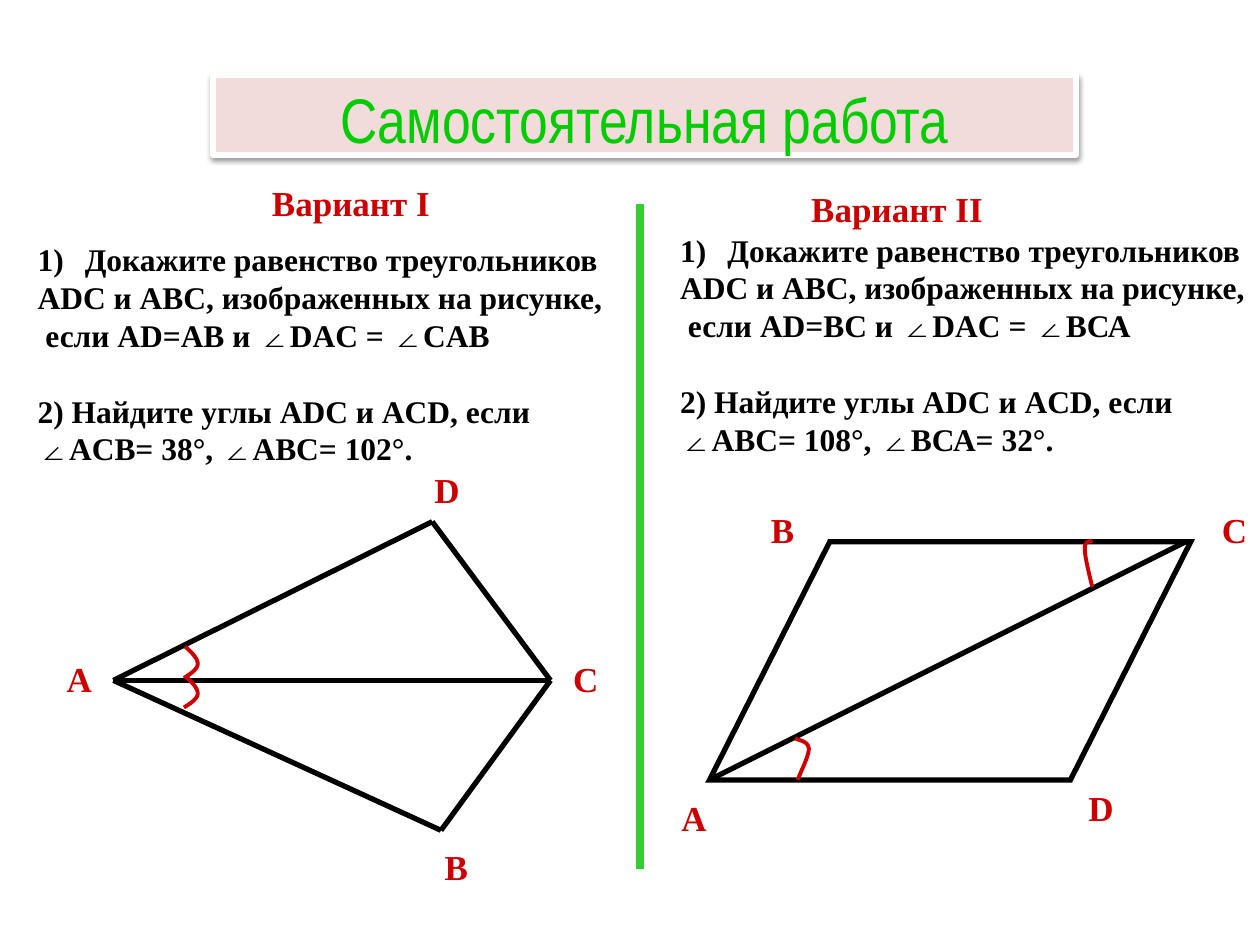
from dataclasses import dataclass
from lxml.etree import SubElement
from pptx import Presentation
from pptx.dml.color import RGBColor
from pptx.enum.shapes import MSO_CONNECTOR, MSO_SHAPE
from pptx.enum.text import MSO_ANCHOR, MSO_AUTO_SIZE, PP_ALIGN
from pptx.oxml.ns import qn
from pptx.util import Pt

HUES = {
    "black": "000000", "red": "CC0000", "green": "33CC33",
    "title": "00CC00", "pink": "F2DCDB", "white": "FFFFFF",
}
SERIF = "Times New Roman"
Point = tuple[float, float]


@dataclass
class Label:
    text: str
    left: float
    top: float
    width: float = 28.8


@dataclass
class Task:
    left: float
    top: float
    lines: list[str]


@dataclass
class Stroke:
    start: Point
    end: Point
    hue: str = "black"
    weight: float = 3


@dataclass
class Arc:
    start: Point
    curves: list[tuple[Point, Point, Point]]


def tint(name: str) -> RGBColor:
    return RGBColor.from_string(HUES[name])


def add_run(para, text: str, size: float, hue: str, face: str = SERIF, bold: bool = True) -> None:
    run = para.add_run()
    run.text = text
    run.font.size = Pt(size)
    run.font.name = face
    run.font.bold = bold
    run.font.color.rgb = tint(hue)


def add_box(slide, left: float, top: float, width: float, height: float):
    box = slide.shapes.add_textbox(Pt(left), Pt(top), Pt(width), Pt(height))
    box.text_frame.word_wrap = False
    box.text_frame.auto_size = MSO_AUTO_SIZE.SHAPE_TO_FIT_TEXT
    return box.text_frame


def draw_label(slide, label: Label) -> None:
    frame = add_box(slide, label.left, label.top, label.width, 31)
    add_run(frame.paragraphs[0], label.text, 20, "red")


def draw_task(slide, task: Task) -> None:
    frame = add_box(slide, task.left, task.top, 338.4, 136.8)
    for row, line in enumerate(task.lines):
        para = frame.add_paragraph() if row else frame.paragraphs[0]
        para.line_spacing = Pt(21.6)
        if row == 3:
            para.space_before = Pt(21.6)
        props = para._p.get_or_add_pPr()
        props.set("marL", str(Pt(27)))
        props.set("indent", str(-Pt(27)))
        if row:
            SubElement(props, qn("a:buNone"))
        else:
            SubElement(props, qn("a:buFontTx"))
            SubElement(props, qn("a:buAutoNum"), type="arabicParenR")
        add_run(para, line, 18, "black")


def draw_stroke(slide, stroke: Stroke) -> None:
    ends = [Pt(n) for n in stroke.start + stroke.end]
    line = slide.shapes.add_connector(MSO_CONNECTOR.STRAIGHT, *ends)
    line.line.color.rgb = tint(stroke.hue)
    line.line.width = Pt(stroke.weight)
    SubElement(line._element.spPr, qn("a:effectLst"))


def style(shape, fill: str | None, line: str, weight: float) -> None:
    shape.shadow.inherit = False
    if fill:
        shape.fill.solid()
        shape.fill.fore_color.rgb = tint(fill)
    else:
        shape.fill.background()
    shape.line.color.rgb = tint(line)
    shape.line.width = Pt(weight)


def blend(a: Point, b: Point, c: Point, d: Point, t: float) -> Point:
    u = 1 - t
    x, y = (
        u**3 * p + 3 * u * u * t * q + 3 * u * t * t * r + t**3 * s
        for p, q, r, s in zip(a, b, c, d)
    )
    return Pt(x), Pt(y)


def draw_arc(slide, arc: Arc, drop: float = 0) -> None:
    steps = 10
    last = arc.start
    points = []
    for one, two, end in arc.curves:
        points += [blend(last, one, two, end, n / steps) for n in range(1, steps + 1)]
        last = end
    pen = slide.shapes.build_freeform(Pt(arc.start[0]), Pt(arc.start[1]))
    pen.add_line_segments(points, close=False)
    shape = pen.convert_to_shape(0, Pt(drop))
    style(shape, None, "red", 2.25)


def draw_title(slide) -> None:
    box = slide.shapes.add_shape(MSO_SHAPE.RECTANGLE, Pt(121.7), Pt(43.2), Pt(493.2), Pt(45.4))
    style(box, "pink", "white", 3)
    glow = SubElement(
        box._element.spPr.find(qn("a:effectLst")), qn("a:outerShdw"),
        blurRad=str(Pt(3.1)), dist=str(Pt(1.6)), dir="5400000", rotWithShape="0",
    )
    shade = SubElement(glow, qn("a:srgbClr"), val=HUES["black"])
    SubElement(shade, qn("a:alpha"), val="38000")
    frame = box.text_frame
    frame.word_wrap = False
    frame.vertical_anchor = MSO_ANCHOR.TOP
    frame.margin_top = Pt(3)
    para = frame.paragraphs[0]
    para.alignment = PP_ALIGN.CENTER
    add_run(para, "Самостоятельная работа", 36, "title", "Arial Narrow", False)


def draw_slant(slide) -> None:
    shape = slide.shapes.add_shape(
        MSO_SHAPE.PARALLELOGRAM, Pt(405.4), Pt(309.6), Pt(275), Pt(136.1))
    shape.adjustments[0] = 0.505
    style(shape, None, "black", 3)
    SubElement(shape._element.spPr.find(qn("a:ln")), qn("a:miter"), lim="800000")


LABELS = [
    Label("Вариант I", 148.3, 100.1, 108),
    Label("Вариант II", 456.5, 103.7, 112.3),
    Label("D", 241.2, 264.2), Label("А", 31, 372.2),
    Label("В", 247, 479.5), Label("С", 320.4, 372.2),
    Label("А", 382.3, 451.4), Label("D", 614.9, 445.7),
    Label("B", 433.4, 287.3), Label("C", 691.2, 287.3),
]
HEAD = ["Докажите равенство треугольников", "ADC и ABC, изображенных на рисунке,"]
FIND = "2) Найдите углы ADC и ACD, если"
TASKS = [
    Task(14.4, 133.9, HEAD + [" если AD=AB и ∠DAC = ∠СAB", FIND, "∠ACB= 38°, ∠ABС= 102°."]),
    Task(381.6, 128.2, HEAD + [" если AD=BС и ∠DAC = ∠BСА", FIND, "∠ABС= 108°, ∠BСА= 32°."]),
]
A, B, C, D = (64.8, 388.8), (252, 474.5), (314.6, 388.8), (247, 298.1)
STROKES = [Stroke((365.8, 116.6), (365.8, 496.8), "green", 4.5)]
STROKES += [Stroke(p, q) for p, q in [(A, C), (A, D), (A, B), (D, C), (B, C)]]
STROKES.append(Stroke((405.4, 445.7), (677.5, 309.6)))
TWIN = Arc((105.1, 387.4), [
    ((108.7, 385.2), (113, 382.3), (113, 379.4)),
    ((113, 375.8), (108.7, 372.2), (105.8, 369.4)),
])
ARCS = [
    Arc((455.8, 445.7), [
        ((458.6, 438.5), (462.2, 432), (462.2, 427.7)),
        ((461.5, 423.4), (457.2, 423.4), (454.3, 421.9)),
    ]),
    Arc((624.2, 335.5), [
        ((622.1, 326.9), (619.9, 318.2), (619.9, 313.2)),
        ((619.9, 308.9), (622.8, 309.6), (624.2, 308.9)),
    ]),
]


def main() -> None:
    deck = Presentation()
    deck.slide_width, deck.slide_height = Pt(720), Pt(540)
    slide = deck.slides.add_slide(deck.slide_layouts[6])
    draw_title(slide)
    for task in TASKS:
        draw_task(slide, task)
    draw_slant(slide)
    for stroke in STROKES:
        draw_stroke(slide, stroke)
    for drop in (0, 16.9):
        draw_arc(slide, TWIN, drop)
    for arc in ARCS:
        draw_arc(slide, arc)
    for label in LABELS:
        draw_label(slide, label)
    deck.save("out.pptx")


if __name__ == "__main__":
    main()
